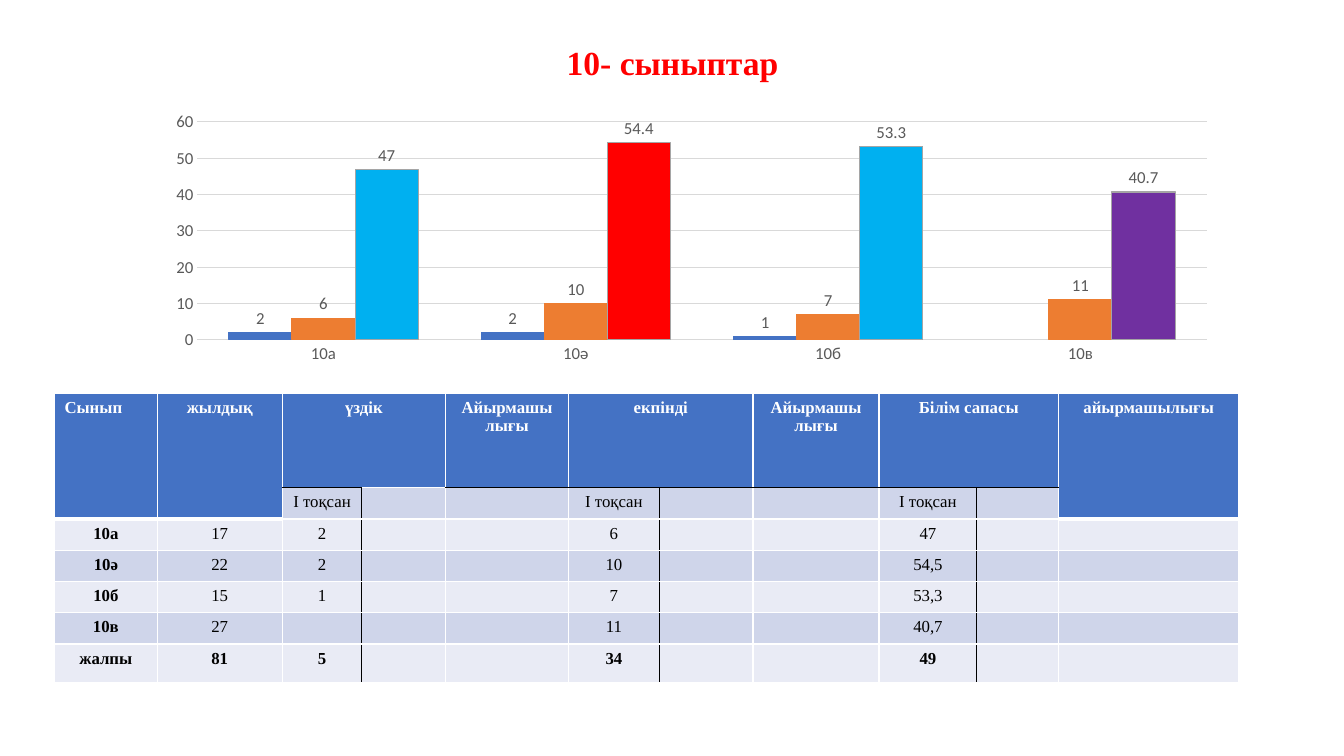
from lxml import etree
from pptx import Presentation
from pptx.chart.data import CategoryChartData
from pptx.dml.color import RGBColor
from pptx.enum.chart import XL_CHART_TYPE, XL_LABEL_POSITION, XL_TICK_MARK
from pptx.enum.text import MSO_ANCHOR, PP_ALIGN
from pptx.oxml.ns import qn
from pptx.util import Inches, Pt

COLUMNS = XL_CHART_TYPE.COLUMN_CLUSTERED
OUTSIDE = XL_LABEL_POSITION.OUTSIDE_END
NO_TICK = XL_TICK_MARK.NONE
LEFT, CENTER = PP_ALIGN.LEFT, PP_ALIGN.CENTER
MIDDLE = MSO_ANCHOR.MIDDLE

SERIF, SANS = "Times New Roman", "Calibri"
WHITE, BLACK, BLUE = "FFFFFF", "000000", "4472C4"
BANDS = ["E9EBF5", "CFD5EA"]
GREY, PALE = "595959", "D9D9D9"

HEADING = "10- сыныптар"
CLASSES = ["10а", "10ә", "10б", "10в"]
SERIES = [
    ("Series 1", [2, 2, 1, None], BLUE, BLUE),
    ("Series 2", [6, 10, 7, 11], "ED7D31", "ED7D31"),
    ("Series 3", [47, 54.4, 53.3, 40.7], "00B0F0", "A5A5A5"),
]
QUALITY_COLORS = ["00B0F0", "FF0000", "00B0F0", "7030A0"]
PLOT_AREA = {"x": 0.084, "y": 0.121, "w": 0.86, "h": 0.793}

GRADES = [
    ["Сынып", "жылдық", "үздік", "", "Айырмашы\nлығы", "екпінді", "",
     "Айырмашы\nлығы", "Білім сапасы", "", "айырмашылығы"],
    ["", "", "І тоқсан", "", "", "І тоқсан", "", "", "І тоқсан", "", ""],
    ["10а", "17", "2", "", "", "6", "", "", "47", "", ""],
    ["10ә", "22", "2", "", "", "10", "", "", "54,5", "", ""],
    ["10б", "15", "1", "", "", "7", "", "", "53,3", "", ""],
    ["10в", "27", "", "", "", "11", "", "", "40,7", "", ""],
    ["жалпы", "81", "5", "", "", "34", "", "", "49", "", ""],
]
COL_WIDTHS = [1.02, 1.24, 0.79, 0.83, 1.22, 0.9, 0.93, 1.25, 0.97, 0.81, 1.79]
ROW_HEIGHTS = [0.94, 0.31, 0.31, 0.31, 0.31, 0.31, 0.38]
TALL_COLS = [0, 1, 10]
TERM_COLS = [2, 5, 8]
TOTAL_ROW = len(GRADES) - 1


def rgb(value):
    return RGBColor.from_string(value)


def set_font(font, color, **values):
    font.color.rgb = rgb(color)
    for name, value in values.items():
        setattr(font, name, value)


def set_line(line, color):
    line.color.rgb = rgb(color)
    line.width = Pt(0.75)


def paint(part, fill, line):
    part.format.fill.solid()
    part.format.fill.fore_color.rgb = rgb(fill)
    set_line(part.format.line, line)


def add_heading(slide):
    heading = slide.shapes.add_textbox(
        Inches(0.92), Inches(0.4), Inches(11.5), Inches(0.48)).text_frame
    heading.word_wrap = True
    heading.vertical_anchor = MIDDLE
    paragraph = heading.paragraphs[0]
    paragraph.alignment = CENTER
    paragraph.line_spacing = 0.9
    run = paragraph.add_run()
    run.text = HEADING
    set_font(run.font, "FF0000", name=SERIF, size=Pt(24), bold=True)


def place_plot(chart):
    plot_area = chart._chartSpace.find(".//" + qn("c:plotArea"))
    for unused in plot_area.findall(qn("c:layout")):
        plot_area.remove(unused)
    layout = etree.Element(qn("c:layout"))
    manual = etree.SubElement(layout, qn("c:manualLayout"))
    settings = {"layoutTarget": "inner", "xMode": "edge", "yMode": "edge", **PLOT_AREA}
    for tag, value in settings.items():
        etree.SubElement(manual, qn("c:" + tag), val=str(value))
    plot_area.insert(0, layout)


def add_grade_chart(slide):
    data = CategoryChartData()
    data.categories = CLASSES
    for name, values, *colors in SERIES:
        data.add_series(name, values)
    chart = slide.shapes.add_chart(
        COLUMNS, Inches(0.98), Inches(0.88), Inches(11.64), Inches(2.73), data).chart
    chart.has_title = False
    chart.has_legend = False
    set_font(chart.font, GREY, name=SANS, size=Pt(12))
    plot = chart.plots[0]
    plot.vary_by_categories = False
    plot.gap_width = 100
    plot.overlap = 0
    for series, (name, values, fill, line) in zip(plot.series, SERIES):
        paint(series, fill, line)
        labels = series.data_labels
        labels.show_value = True
        labels.position = OUTSIDE
        set_font(labels.font, GREY, name=SANS, size=Pt(12))
    for index, color in enumerate(QUALITY_COLORS):
        paint(plot.series[2].points[index], color, SERIES[2][3])
    for axis in (chart.category_axis, chart.value_axis):
        axis.major_tick_mark = axis.minor_tick_mark = NO_TICK
        set_font(axis.tick_labels.font, GREY, name=SANS, size=Pt(12))
    set_line(chart.category_axis.format.line, PALE)
    scale = chart.value_axis
    scale.minimum_scale, scale.maximum_scale, scale.major_unit = 0, 60, 10
    scale.format.line.fill.background()
    set_line(scale.major_gridlines.format.line, PALE)
    place_plot(chart)


def cell_borders(row, col):
    borders = {side: (WHITE, 1) for side in "LRTB"}
    term, blank = col in TERM_COLS, col - 1 in TERM_COLS
    if row > 0 and term:
        borders["R"] = (BLACK, 1)
    if row > 0 and blank:
        borders["L"] = (BLACK, 1)
    if row < 2 and col in TALL_COLS:
        borders["B"] = (WHITE, 3)
    elif row < 2 and col != 3:
        borders["B" if row == 0 else "T"] = (BLACK, 1)
    return borders


def draw_borders(cell, borders):
    properties = cell._tc.get_or_add_tcPr()
    for side, (color, width) in borders.items():
        line = etree.SubElement(properties, qn("a:ln" + side), w=str(Pt(width)))
        fill = etree.SubElement(line, qn("a:solidFill"))
        etree.SubElement(fill, qn("a:srgbClr"), val=color)


def add_grade_table(slide):
    table = slide.shapes.add_table(
        len(GRADES), len(COL_WIDTHS), Inches(0.54), Inches(3.9),
        Inches(sum(COL_WIDTHS)), Inches(sum(ROW_HEIGHTS))).table
    table.horz_banding = False
    for column, width in zip(table.columns, COL_WIDTHS):
        column.width = Inches(width)
    for line, height in zip(table.rows, ROW_HEIGHTS):
        line.height = Inches(height)
    for row, texts in enumerate(GRADES):
        for col, text in enumerate(texts):
            cell = table.cell(row, col)
            header = row == 0 or (row == 1 and col in TALL_COLS)
            draw_borders(cell, cell_borders(row, col))
            cell.fill.solid()
            cell.fill.fore_color.rgb = rgb(BLUE if header else BANDS[row % 2])
            cell.text = text
            for paragraph in cell.text_frame.paragraphs:
                paragraph.alignment = LEFT if row == col == 0 else CENTER
                for run in paragraph.runs:
                    set_font(run.font, WHITE if header else BLACK, name=SERIF, size=Pt(12),
                             bold=header or col == 0 or row == TOTAL_ROW)
                if not text:
                    etree.SubElement(paragraph._p, qn("a:endParaRPr"), sz="1200")
    for col in TALL_COLS:
        table.cell(0, col).merge(table.cell(1, col))
    for col in TERM_COLS:
        table.cell(0, col).merge(table.cell(0, col + 1))


def main():
    deck = Presentation()
    deck.slide_width, deck.slide_height = Inches(13.33), Inches(7.5)
    slide = deck.slides.add_slide(deck.slide_layouts[6])
    add_heading(slide)
    add_grade_chart(slide)
    add_grade_table(slide)
    deck.save("out.pptx")


if __name__ == "__main__":
    main()
